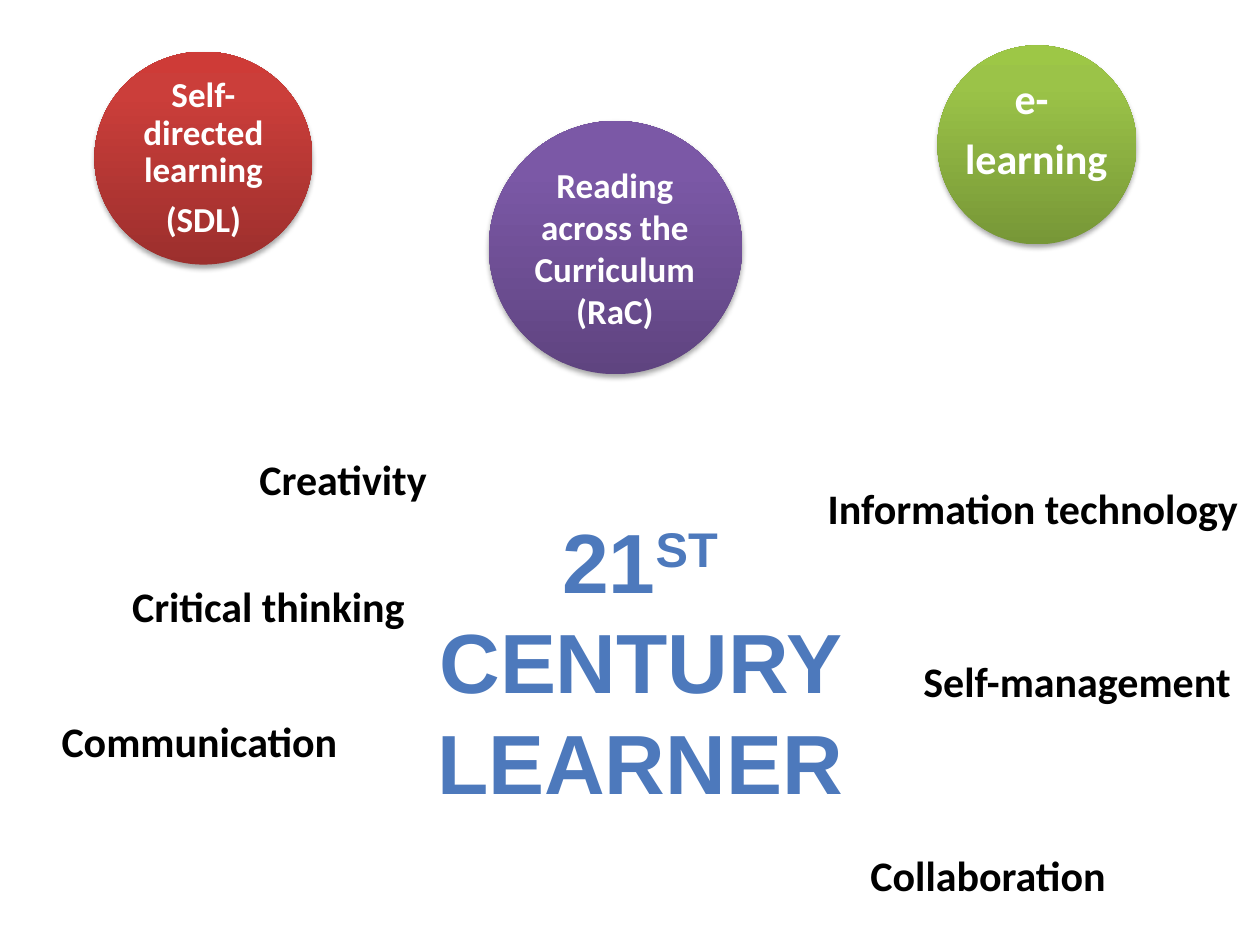
from pptx import Presentation
from pptx.dml.color import RGBColor
from pptx.enum.shapes import MSO_SHAPE
from pptx.enum.text import MSO_ANCHOR, MSO_AUTO_SIZE, PP_ALIGN
from pptx.oxml import parse_xml
from pptx.oxml.ns import nsdecls, qn
from pptx.util import Inches, Pt

OVAL = MSO_SHAPE.OVAL
TOP, MIDDLE = MSO_ANCHOR.TOP, MSO_ANCHOR.MIDDLE
GROW, FIXED = MSO_AUTO_SIZE.SHAPE_TO_FIT_TEXT, MSO_AUTO_SIZE.NONE
LEFT, CENTER = PP_ALIGN.LEFT, PP_ALIGN.CENTER

COLS, ROWS = 100, 75
WIDTH, HEIGHT = Inches(10), Inches(7.5)
SIDES = ("left", "top", "width", "height")
COLORS = {"title": "4D79BC", "light": "FFFFFF", "dark": "000000"}
RAMPS = {
    "purple": {0: "5F4480", 80: "7B58A6", 100: "7C57A8"},
    "green": {0: "779737", 80: "9BC348", 100: "9DC746"},
    "red": {0: "9C2F2D", 80: "CB3E3A", 100: "CE3B37"},
}

ROOMY = {"word_wrap": True, "auto_size": GROW, "vertical_anchor": TOP}
SNUG = {"word_wrap": True, "auto_size": FIXED, "vertical_anchor": MIDDLE}
SNUG |= {f"margin_{side}": Inches(0.04) for side in ("left", "top", "right", "bottom")}

BALLS = [
    ("purple", (38.8, 9.6, 20.1, 20.1), (39.9, 12.5, 17.8, 14.5),
     ["Reading across the Curriculum (RaC)"], 20, ROOMY),
    ("green", (74.4, 3.6, 15.8, 15.8), (74.9, 4.8, 14.7, 11.2),
     ["e- ", "learning"], 24, SNUG),
    ("red", (7.5, 4.1, 17.3, 16.9), (10, 6.6, 12.3, 12),
     ["Self-directed learning", "(SDL)"], 20, SNUG),
]
SKILLS = [
    ("Critical thinking", 9.5, 45.6, 27.7),
    ("Information technology", 64.7, 37.8, 36.5),
    ("Communication", 3.9, 56.3, 27),
    ("Self-management", 72.3, 51.5, 30.1),
    ("Creativity", 19.6, 35.5, 20.1),
    ("Collaboration", 68.1, 66.9, 23.9),
]


def apply(item, values):
    """Set each named value on an item."""
    for name, value in values.items():
        setattr(item, name, value)


def place(col, row, wide, high):
    """Turn grid columns and rows into slide lengths."""
    x, y = WIDTH / COLS, HEIGHT / ROWS
    return [round(n) for n in (col * x, row * y, wide * x, high * y)]


def style(run, size, color, face="Calibri"):
    """Give a run its bold font."""
    apply(run.font, {"name": face, "size": Pt(size), "bold": True})
    run.font.fill.solid()
    run.font.fill.fore_color.rgb = RGBColor.from_string(COLORS[color])


def add_text(slide, cell, lines, size, color, frame, para):
    """Add a text box with one paragraph per line."""
    text = slide.shapes.add_textbox(*place(*cell)).text_frame
    apply(text, frame)
    text.text = "\n".join(lines)
    for item in text.paragraphs:
        apply(item, para)
        style(item.runs[0], size, color)


def add_ball(slide, cell, ramp):
    """Add a shaded circle with a soft shadow."""
    ball = slide.shapes.add_shape(OVAL, *place(*cell))
    ball.line.fill.background()
    ball.fill.gradient()
    ball.fill.gradient_angle = 90
    stops = "".join(
        f'<a:gs pos="{pos * 1000}"><a:srgbClr val="{color}"/></a:gs>'
        for pos, color in RAMPS[ramp].items())
    props = ball._element.spPr
    old = props.find(".//" + qn("a:gsLst"))
    old.getparent().replace(
        old, parse_xml(f'<a:gsLst {nsdecls("a")}>{stops}</a:gsLst>'))
    ball.shadow.inherit = False
    props.find(qn("a:effectLst")).append(parse_xml(
        f'<a:outerShdw {nsdecls("a")} blurRad="{Pt(3.1)}" dist="{Pt(1.8)}" '
        'dir="5400000" rotWithShape="0"><a:srgbClr val="000000">'
        '<a:alpha val="35000"/></a:srgbClr></a:outerShdw>'))


def add_title(slide):
    """Fill the title placeholder, with a raised ordinal."""
    title = slide.shapes.title
    apply(title, dict(zip(SIDES, place(27.2, 39.9, 47.2, 25.2))))
    apply(title.text_frame, ROOMY)
    para = title.text_frame.paragraphs[0]
    para.alignment = CENTER
    for part, base in (("21", 0), ("ST", 30000), (" CENTURY LEARNER", 0)):
        run = para.add_run()
        run.text = part
        style(run, 48, "title", "Arial")
        run.font._element.set("baseline", str(base))


def main():
    """Build and save the slide."""
    deck = Presentation()
    apply(deck, {"slide_width": WIDTH, "slide_height": HEIGHT})
    slide = deck.slides.add_slide(deck.slide_layouts[5])
    for ramp, cell, inner, lines, size, frame in BALLS:
        add_ball(slide, cell, ramp)
        para = {"alignment": CENTER}
        if frame is SNUG:
            para |= {"line_spacing": 0.9, "space_after": Pt(size * 0.35)}
        add_text(slide, inner, lines, size, "light", frame, para)
    for word, col, row, wide in SKILLS:
        add_text(slide, (col, row, wide, 5), [word], 24, "dark", ROOMY,
                 {"alignment": LEFT})
    add_title(slide)
    deck.save("out.pptx")


if __name__ == "__main__":
    main()
